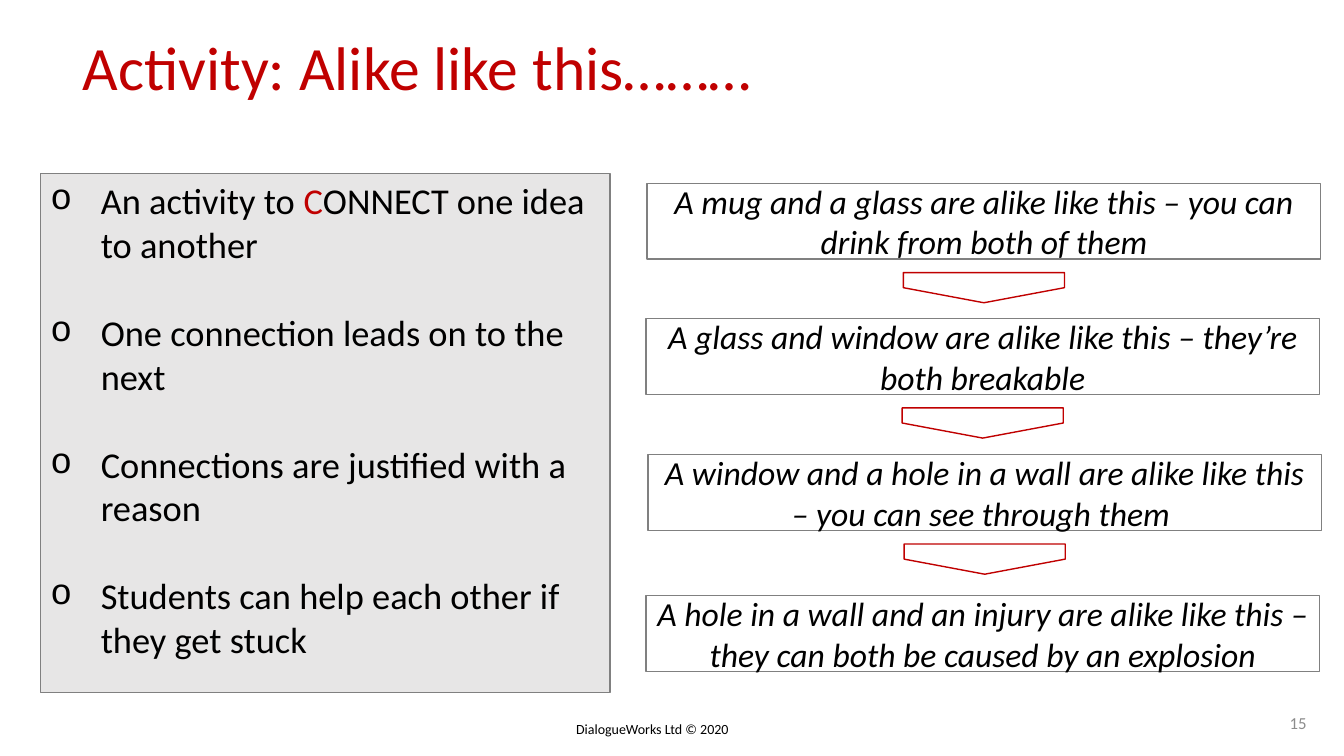
from lxml.etree import SubElement as Sub
from pptx import Presentation
from pptx.dml.color import RGBColor as RGB
from pptx.enum.shapes import MSO_SHAPE as Form
from pptx.enum.text import MSO_ANCHOR as Anchor, MSO_AUTO_SIZE as Fit, PP_ALIGN as Align
from pptx.oxml.ns import qn
from pptx.util import Cm, Pt

RED = RGB(0xC0, 0, 0)
BLACK = RGB(0, 0, 0)
GREY = RGB(0x80, 0x80, 0x80)
PALE = RGB(0xE7, 0xE6, 0xE6)
DIM = RGB(0x8C, 0x8C, 0x8C)

HEAD = dict(size=Pt(44))
RULE = dict(size=Pt(26))
LINK = dict(size=Pt(24), italic=True)
FOOT = dict(size=Pt(10))
PAGE = dict(size=Pt(12))

RULES = [
    [("An activity to ", BLACK), ("C", RED), ("ONNECT one idea to another", BLACK)],
    [("One connection leads on to the next", BLACK)],
    [("Connections are justified with a reason", BLACK)],
    [("Students can help each other if they get stuck", BLACK)],
]
# Left and top of each link box in cm, with its text
LINKS = [
    (16.31, 4.62, "A mug and a glass are alike like this – you can drink from both of them"),
    (16.28, 8.03, "A glass and window are alike like this – they’re both breakable"),
    (16.33, 11.46, "A window and a hole in a wall are alike like this – you can see through them "),
    (16.28, 15.01, "A hole in a wall and an injury are alike like this – "
                   "they can both be caused by an explosion"),
]


def style(font, look, color):
    for key, value in dict(look, name="Calibri").items():
        setattr(font, key, value)
    font.color.rgb = color


def write(para, text, look, color=BLACK):
    run = para.add_run()
    run.text = text
    style(run.font, look, color)


def bullet(para):
    props = para._p.get_or_add_pPr()
    props.set("marL", str(Cm(1.27)))
    props.set("indent", str(-Cm(1.27)))
    Sub(props, qn("a:buFont")).set("typeface", "Courier New")
    Sub(props, qn("a:buChar")).set("char", "o")


def shape(slide, form, box, edge, fill=None):
    item = slide.shapes.add_shape(form, *map(Cm, box))
    item.shadow.inherit = False
    if fill is None:
        item.fill.background()
    else:
        item.fill.solid()
        item.fill.fore_color.rgb = fill
    item.line.color.rgb = edge
    item.line.width = Pt(1)
    return item


def title(slide, box):
    head = slide.shapes.title
    head.left, head.top, head.width, head.height = map(Cm, box)
    frame = head.text_frame
    frame.auto_size = Fit.NONE
    frame.vertical_anchor = Anchor.TOP
    para = frame.paragraphs[0]
    para.alignment = Align.LEFT
    para.line_spacing = 0.9
    write(para, "Activity: Alike like this………", HEAD, RED)


def rules(slide, box):
    frame = shape(slide, Form.RECTANGLE, box, GREY, PALE).text_frame
    frame.vertical_anchor = Anchor.TOP
    for n, parts in enumerate(RULES):
        para = frame.add_paragraph() if n else frame.paragraphs[0]
        para.alignment = Align.LEFT
        if n:
            para.space_before = Pt(31.7)
        bullet(para)
        style(para.font, RULE, BLACK)
        for text, color in parts:
            write(para, text, RULE, color)


def link(slide, box, text):
    frame = shape(slide, Form.RECTANGLE, box, GREY).text_frame
    frame.vertical_anchor = Anchor.MIDDLE
    para = frame.paragraphs[0]
    para.alignment = Align.CENTER
    write(para, text, LINK)


def arrow(slide, box):
    # Centred under the box, turned to point down
    left, top, width, _ = box
    thick, span = 0.76, 4.06
    mid, drop = left + width / 2, top + 2.63
    spot = (mid - thick / 2, drop - span / 2, thick, span)
    shape(slide, Form.PENTAGON, spot, RED).rotation = 90


def chain(slide, width, height):
    for n, (left, top, text) in enumerate(LINKS):
        box = (left, top, width, height)
        link(slide, box, text)
        if n < len(LINKS) - 1:
            arrow(slide, box)


def label(slide, box, text, look, color, align, wrap):
    frame = slide.shapes.add_textbox(*map(Cm, box)).text_frame
    frame.word_wrap = wrap
    frame.vertical_anchor = Anchor.MIDDLE
    para = frame.paragraphs[0]
    para.alignment = align
    write(para, text, look, color)


def main():
    deck = Presentation()
    deck.slide_width, deck.slide_height = Cm(33.87), Cm(19.05)
    slide = deck.slides.add_slide(deck.slide_layouts[5])
    title(slide, (1.83, 0.81, 24.87, 2.69))
    rules(slide, (1.02, 4.37, 14.35, 13.08))
    chain(slide, 16.97, 1.91)
    # Footer and page number
    label(slide, (14.27, 18.03, 4.45, 0.69), "DialogueWorks Ltd © 2020",
          FOOT, BLACK, Align.LEFT, False)
    label(slide, (31.88, 17.7, 1.3, 1.02), "15", PAGE, DIM, Align.RIGHT, True)
    deck.save("out.pptx")


if __name__ == "__main__":
    main()
